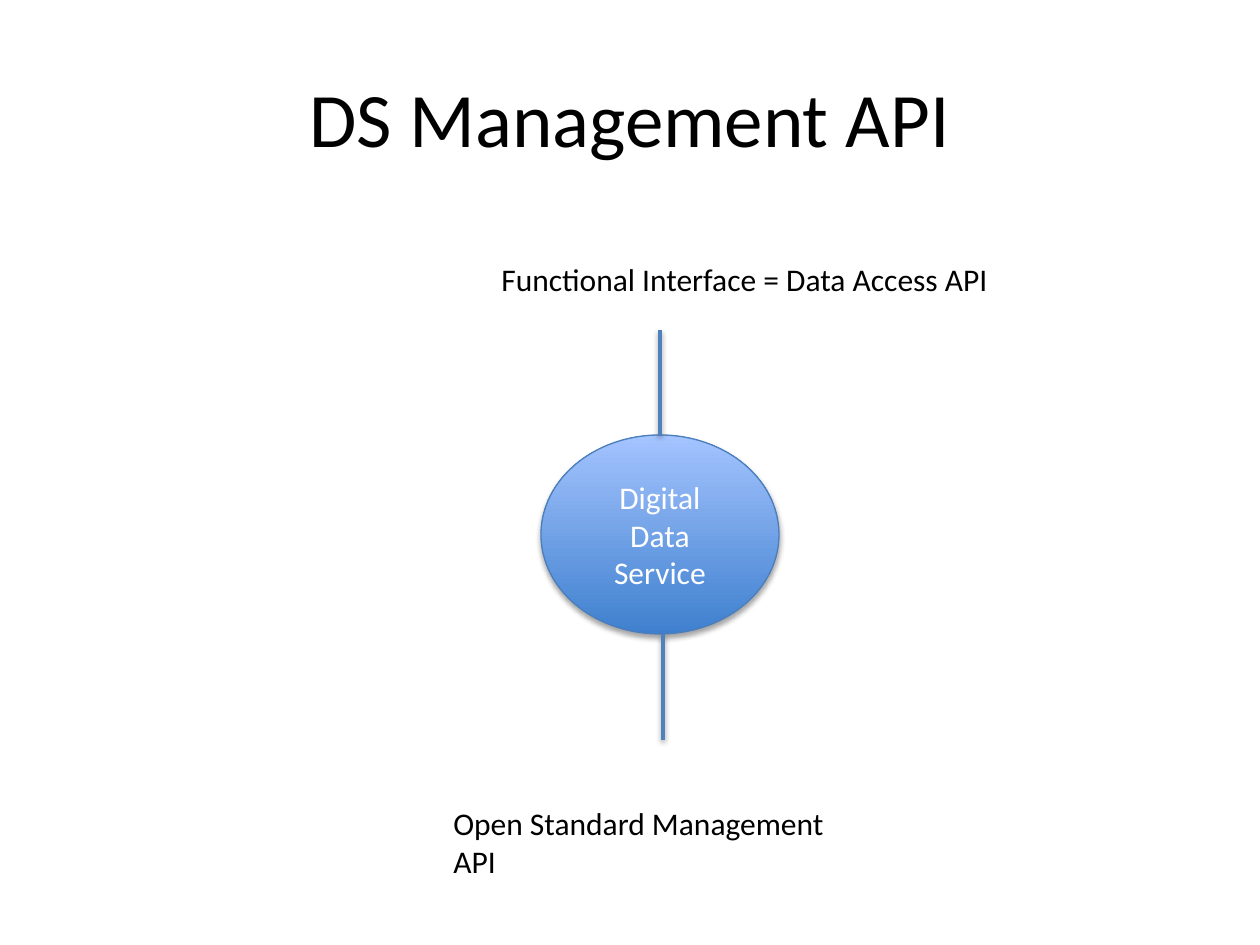
from lxml import etree
from pptx import Presentation, util as u
from pptx.dml.color import RGBColor
from pptx.enum import shapes, text
from pptx.oxml import ns

BLACK = RGBColor(0x00, 0x00, 0x00)
WHITE = RGBColor(0xFF, 0xFF, 0xFF)
LIGHT = RGBColor(0xA4, 0xC4, 0xFF)
DEEP = RGBColor(0x3F, 0x80, 0xCE)
EDGE = RGBColor(0x4B, 0x7E, 0xBC)
BLUE = RGBColor(0x4F, 0x81, 0xBD)
LEFT, MID = text.PP_ALIGN.LEFT, text.PP_ALIGN.CENTER


def px(n):
    return u.Emu(round(n * 914400 / 126))


def write(frame, words, size=18, color=BLACK, align=LEFT, wrap=False,
          anchor=text.MSO_ANCHOR.TOP):
    frame.word_wrap = wrap
    frame.vertical_anchor = anchor
    frame.text = words
    for para in frame.paragraphs:
        para.alignment = align
        font = para.runs[0].font
        font.name, font.size = "Calibri", u.Pt(size)
        font.color.rgb = color


def shade(item, dist, alpha):
    props = item._element.spPr
    for old in props.findall(ns.qn("a:effectLst")):
        props.remove(old)
    fx = etree.SubElement(props, ns.qn("a:effectLst"))
    drop = etree.SubElement(fx, ns.qn("a:outerShdw"), blurRad=str(u.Pt(3.1)),
                            dist=str(u.Pt(dist)), dir="5400000", rotWithShape="0")
    tone = etree.SubElement(drop, ns.qn("a:srgbClr"), val=str(BLACK))
    etree.SubElement(tone, ns.qn("a:alpha"), val=str(alpha * 1000))


class Deck:
    """Holds the style and the current slide."""

    def __init__(self):
        self.prs = Presentation()
        self.prs.slide_width, self.prs.slide_height = px(1260), px(945)
        self.slide = self.prs.slides.add_slide(self.prs.slide_layouts[6])

    def label(self, words, x, y, w, h, **style):
        box = self.slide.shapes.add_textbox(px(x), px(y), px(w), px(h))
        write(box.text_frame, words, **style)

    def oval(self, words, x, y, w, h):
        oval = self.slide.shapes.add_shape(
            shapes.MSO_SHAPE.OVAL, px(x), px(y), px(w), px(h))
        oval.fill.gradient()
        oval.fill.gradient_angle = 90
        for stop, color, pos in zip(oval.fill.gradient_stops, (DEEP, LIGHT), (0, 1)):
            stop.color.rgb, stop.position = color, pos
        oval.line.color.rgb, oval.line.width = EDGE, u.Pt(0.75)
        shade(oval, 1.8, 35)
        write(oval.text_frame, words, color=WHITE, align=MID, wrap=True,
              anchor=text.MSO_ANCHOR.MIDDLE)
        return oval

    def line(self, x, top, end, goal=None):
        line = self.slide.shapes.add_connector(
            shapes.MSO_CONNECTOR.STRAIGHT, px(x), px(top), px(x), px(end))
        if goal is not None:
            line.end_connect(goal, 0)
        line.line.color.rgb, line.line.width = BLUE, u.Pt(2)
        shade(line, 1.6, 38)


def main():
    deck = Deck()
    deck.label("DS Management API", 63, 38, 1134, 158, size=44, align=MID,
               wrap=True, anchor=text.MSO_ANCHOR.MIDDLE)
    service = deck.oval("Digital Data\nService", 541, 435, 238, 199)
    deck.line(660, 330, 435, service)
    deck.label("Functional Interface = Data Access API", 489, 254, 519, 50)
    deck.label("Open Standard Management API", 441, 798, 438, 50)
    deck.line(663, 634, 740)
    deck.prs.save("out.pptx")


if __name__ == "__main__":
    main()
